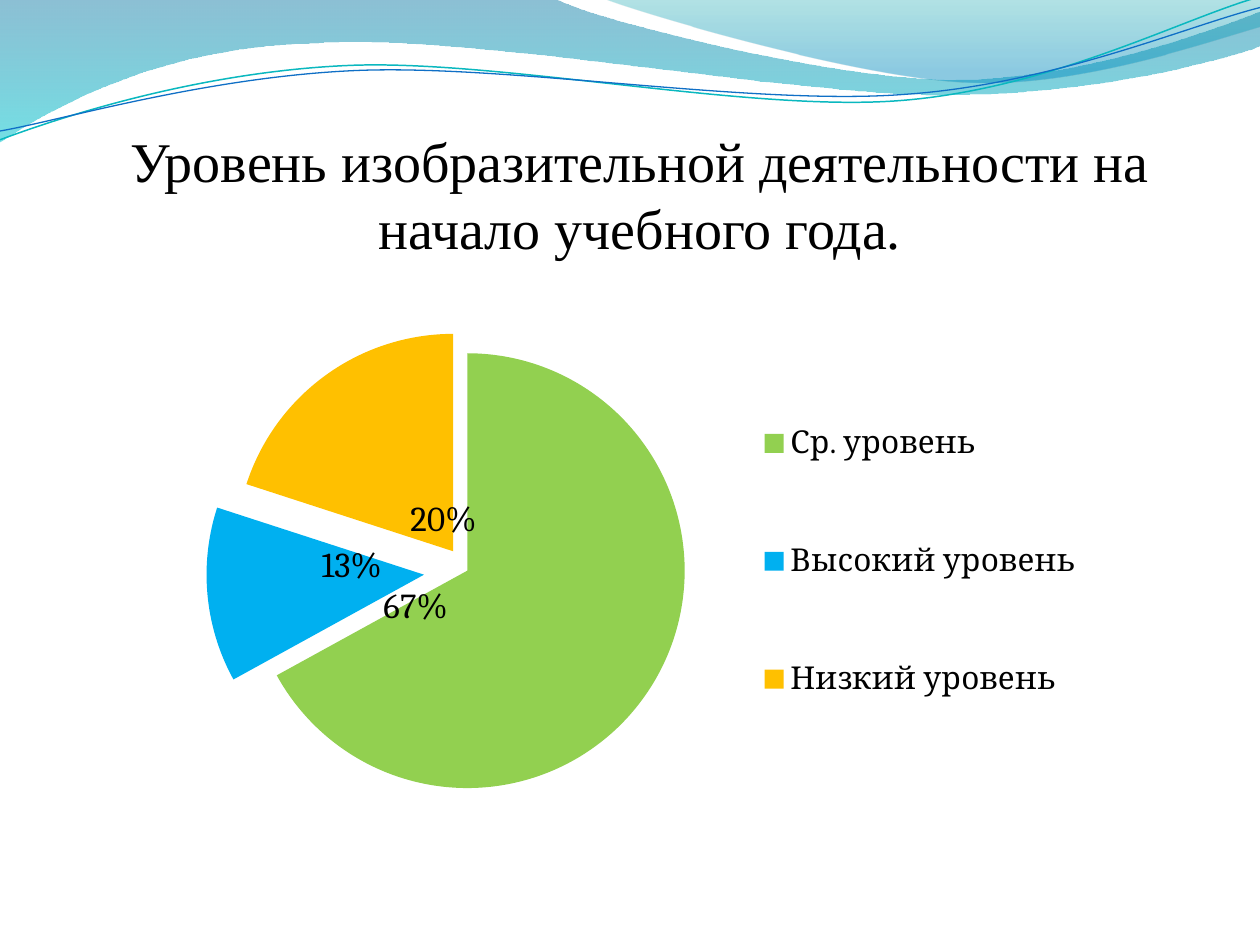
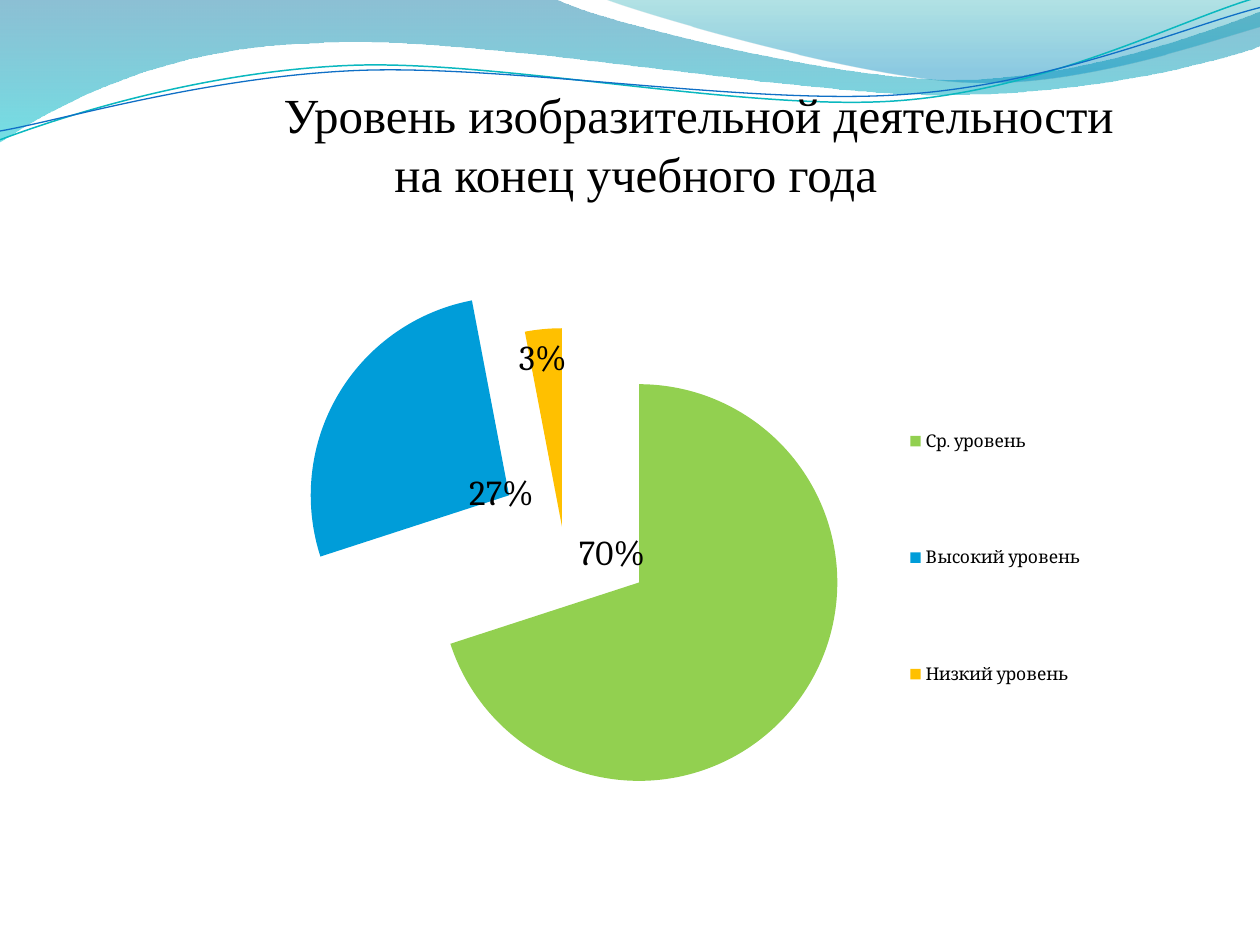
"""Build two slides of pie charts on children's drawing levels."""
from lxml.etree import SubElement
from pptx import Presentation
from pptx.chart.data import CategoryChartData
from pptx.dml.color import RGBColor
from pptx.enum.chart import XL_CHART_TYPE, XL_LABEL_POSITION, XL_LEGEND_POSITION
from pptx.enum.text import MSO_ANCHOR, MSO_AUTO_SIZE, PP_ALIGN
from pptx.oxml import parse_xml
from pptx.oxml.ns import nsdecls, qn
from pptx.util import Inches, Pt

COLORS = {
    "black": "000000", "deep": "0074A1", "aqua": "00C6CF", "teal": "00A1A9",
    "sea": "008BBF", "teal_line": "0AB8BF", "blue_line": "0F6FC6",
    "green": "92D050", "sky": "00B0F0", "blue": "009DD9", "amber": "FFC000",
}
LEVELS = ["Ср. уровень", "Высокий уровень", "Низкий уровень"]

LEFT_WAVE = [(0, 0), [(4.4, -0.01)],
             [(4.76, 0.17), (6.64, 0.63), (7.58, 0.63)],
             [(8.53, 0.63), (9.58, 0.26), (10, 0.09)], [(10.01, 0.36)],
             [(9.83, 0.44), (8.7, 0.76), (7.46, 0.75)],
             [(6.22, 0.75), (3.82, 0.28), (2.57, 0.34)],
             [(1.29, 0.36), (0.46, 0.83), (-0.01, 1.13)]]
RIGHT_WAVE = [(4.79, -0.01),
              [(5.09, 0.11), (6.82, 0.62), (7.69, 0.65)],
              [(8.56, 0.69), (9.61, 0.32), (10, 0.21)], [(10, 0)]]
TEAL_CURVE = [(0, 1.11),
              [(0.48, 0.93), (1.58, 0.57), (2.77, 0.52)],
              [(3.95, 0.47), (5.93, 0.89), (7.13, 0.8)],
              [(8.33, 0.71), (9.38, 0.15), (9.98, -0.02)]]
BLUE_CURVE = [(0, 1.04),
              [(0.47, 0.96), (1.64, 0.61), (2.83, 0.56)],
              [(4.03, 0.51), (5.97, 0.84), (7.17, 0.75)],
              [(8.36, 0.67), (9.41, 0.21), (10, 0.06)]]


def color(name):
    return RGBColor.from_string(COLORS[name])


def manual_layout(target, x, y, w=None, h=None):
    """Return the layout element that places a plot, legend or label."""
    layout = parse_xml(f"<c:layout {nsdecls('c')}><c:manualLayout/></c:layout>")
    settings = {"x": x, "y": y}
    if w is not None:
        modes = {"xMode": "edge", "yMode": "edge"}
        if target == "plot":
            modes = {"layoutTarget": "inner", **modes}
        settings = {**modes, **settings, "w": w, "h": h}
    for tag, value in settings.items():
        SubElement(layout[0], qn(f"c:{tag}")).set("val", str(value))
    return layout


class Builder:
    """Holds the deck style and the current page."""

    def __init__(self):
        self.deck = Presentation()
        self.deck.slide_width, self.deck.slide_height = Inches(10), Inches(7.5)
        self.layout = self.deck.slide_layouts[5]
        for holder in list(self.layout.placeholders)[1:]:
            self.layout.shapes.element.remove(holder.element)
        self.page = None

    def add_page(self):
        self.page = self.deck.slides.add_slide(self.layout)

    def outline(self, outline, close):
        start, *segments = outline
        builder = self.page.shapes.build_freeform(*map(Inches, start))
        builder.add_line_segments(
            [(Inches(x), Inches(y)) for segment in segments for x, y in segment], close=close)
        shape = builder.convert_to_shape()
        shape.shadow.inherit = False
        lines = iter(shape.element.xpath(".//a:lnTo"))
        for segment in segments:
            first, *others = [next(lines) for _ in segment]
            if others:
                first.tag = qn("a:cubicBezTo")
            for line in others:
                first.append(line[0])
                line.getparent().remove(line)
        return shape

    def wave(self, outline, stops):
        shape = self.outline(outline, True)
        shape.line.fill.background()
        shape.fill.gradient()
        shape.fill.gradient_angle = 270
        for stop, (position, name, _) in zip(shape.fill.gradient_stops, stops):
            stop.position = position
            stop.color.rgb = color(name)
        for tint, (_, _, opacity) in zip(shape.element.xpath(".//a:gs/a:srgbClr"), stops):
            SubElement(tint, qn("a:alpha")).set("val", str(opacity * 1000))
        return shape

    def curve(self, outline, name, width):
        shape = self.outline(outline, False)
        shape.fill.background()
        shape.line.color.rgb = color(name)
        shape.line.width = Pt(width)
        return shape

    def waves_to_layout(self):
        shapes = [
            self.wave(LEFT_WAVE, [(0, "deep", 45), (1, "aqua", 55)]),
            self.wave(RIGHT_WAVE, [(0, "teal", 30), (0.8, "sea", 45)]),
            self.curve(TEAL_CURVE, "teal_line", 0.85),
            self.curve(BLUE_CURVE, "blue_line", 0.75),
        ]
        for index, shape in enumerate(shapes, 2):
            self.layout.shapes.element.insert(index, shape.element)

    def title(self, text, place, size, anchor, indent=0):
        box = self.page.shapes.title
        box.left, box.top, box.width, box.height = map(Inches, place)
        frame = box.text_frame
        frame.word_wrap = True
        frame.auto_size = MSO_AUTO_SIZE.NONE
        frame.vertical_anchor = anchor
        frame.text = text
        para = frame.paragraphs[0]
        para.alignment = PP_ALIGN.CENTER
        if indent:
            para._p.get_or_add_pPr().set("indent", str(Inches(indent)))
        para.font.name = "Times New Roman"
        para.font.size = Pt(size)
        para.font.color.rgb = color("black")

    def pie(self, place, slices, plot_place, legend_place, legend_size):
        data = CategoryChartData(number_format="0%")
        data.categories = LEVELS
        data.add_series("Series 1", [share for share, *_ in slices])
        chart = self.page.shapes.add_chart(
            XL_CHART_TYPE.PIE, *map(Inches, place), data).chart
        chart.has_title = False
        chart.font.name = "Cambria"
        chart.font.size = Pt(10)
        chart.font.color.rgb = color("black")
        chart.has_legend = True
        chart.legend.position = XL_LEGEND_POSITION.RIGHT
        chart.legend.include_in_layout = False
        chart.legend.font.size = Pt(legend_size)
        chart.plots[0].vary_by_categories = True
        series = chart.plots[0].series[0]
        for index, (_, name, _, _) in enumerate(slices):
            point = series.points[index]
            point.format.fill.solid()
            point.format.fill.fore_color.rgb = color(name)
            point.format.line.fill.background()
            point.data_label.font.size = Pt(20)
            point.data_label.position = XL_LABEL_POSITION.CENTER
        self.arrange_pie(chart.element, slices, plot_place, legend_place)

    def arrange_pie(self, root, slices, plot_place, legend_place):
        for fill, (_, _, explosion, _) in zip(root.xpath(".//c:dPt/c:spPr"), slices):
            fill.addprevious(parse_xml(
                f'<c:explosion {nsdecls("c")} val="{explosion}"/>'))
        for label, (_, _, _, shift) in zip(root.xpath(".//c:dLbl"), slices):
            label.insert(1, manual_layout("label", *shift))
        for lines in root.xpath(".//c:showLeaderLines"):
            lines.set("val", "0")
        for old in root.xpath(".//c:plotArea/c:layout | .//c:legend/c:layout"):
            old.getparent().remove(old)
        root.xpath(".//c:plotArea")[0].insert(0, manual_layout("plot", *plot_place))
        root.xpath(".//c:legend/c:legendPos")[0].addnext(
            manual_layout("legend", *legend_place))


def main():
    builder = Builder()
    builder.add_page()
    builder.waves_to_layout()
    builder.title("Уровень изобразительной деятельности на начало учебного года.",
                  (0.55, 0.47, 9.06, 1.65), 32, MSO_ANCHOR.BOTTOM)
    builder.pie((1.48, 2.03, 7.19, 5),
                [(0.67, "green", 0, (-0.16, -0.03)),
                 (0.13, "sky", 20, (0.04, -0.03)),
                 (0.2, "amber", 11, (0.06, 0.09))],
                (0.07, 0.15, 0.48, 0.7), (0.63, 0.14, 0.36, 0.69), 18)

    builder.add_page()
    builder.title("Уровень изобразительной деятельности на конец учебного года",
                  (1.02, 0.62, 8.05, 1.51), 28, MSO_ANCHOR.TOP, indent=1)
    builder.pie((1.33, 1.72, 7.73, 4.92),
                [(0.7, "green", 48, (-0.11, -0.14)),
                 (0.27, "blue", 31, (0.08, 0.08)),
                 (0.03, "amber", 0, (-0.01, -0.11))],
                (0.2, 0.18, 0.41, 0.64), (0.75, 0.19, 0.2, 0.72), 10)
    builder.deck.save("out.pptx")


if __name__ == "__main__":
    main()
